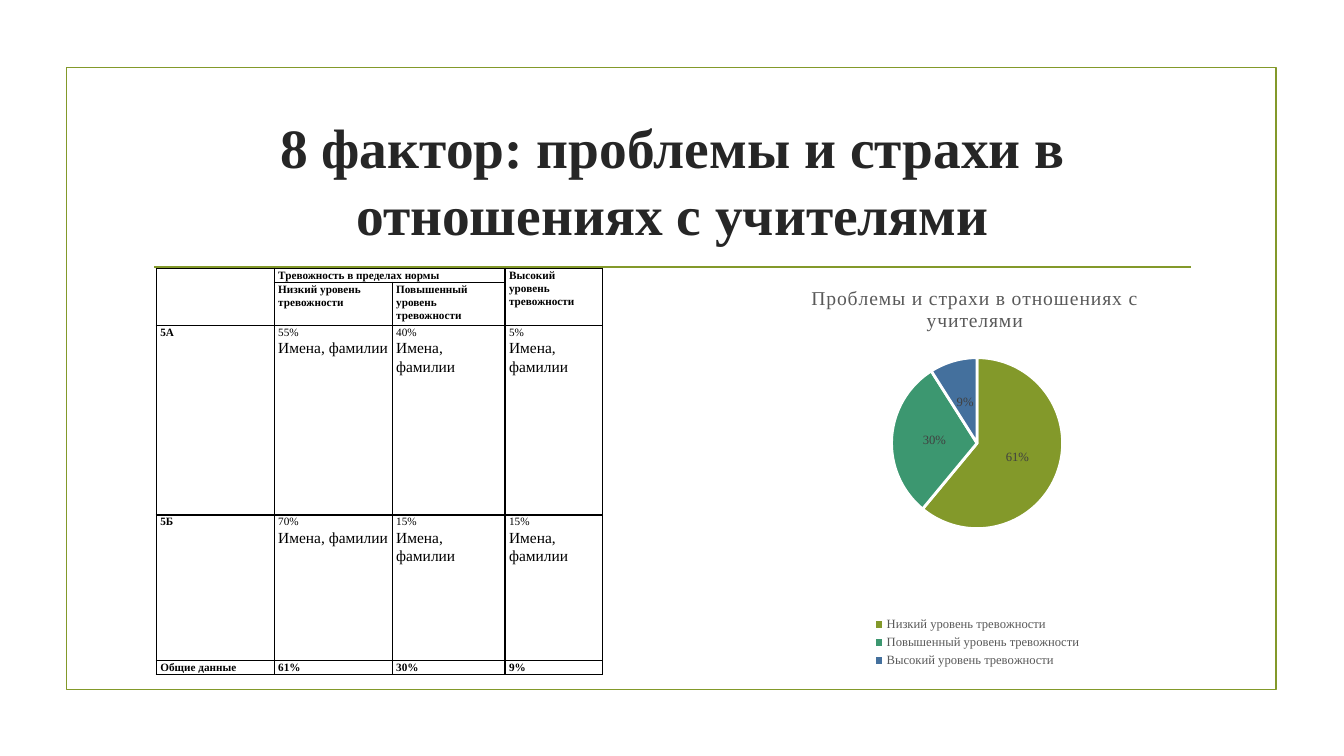
from lxml import etree
from pptx import Presentation
from pptx.chart.data import CategoryChartData
from pptx.dml.color import RGBColor
from pptx.enum import chart as ch, shapes, text
from pptx.oxml import parse_xml
from pptx.oxml.ns import nsdecls, qn
from pptx.util import Inches, Pt

# Content
FONT, GREEN = "Times New Roman", "83992A"
TITLE = "8 фактор: проблемы и страхи в отношениях с учителями"
NAMES = "Имена, фамилии"
ROWS = [
    ["", "Тревожность в пределах нормы", "", "Высокий уровень тревожности"],
    ["", "Низкий уровень тревожности", "Повышенный уровень тревожности", ""],
    ["5А", "55%", "40%", "5%"],
    ["5Б", "70%", "15%", "15%"],
    ["Общие данные", "61%", "30%", "9%"],
]
NAMED_ROWS = (2, 3)
MERGES = [((0, 0), (1, 0)), ((0, 1), (0, 2)), ((0, 3), (1, 3))]
COL_WIDTHS = [1.17, 1.17, 1.12, 0.97]
ROW_HEIGHTS = [0.14, 0.43, 1.88, 1.44, 0.14]
CHART_TITLE = "Проблемы и страхи в отношениях с учителями"
LEVELS = [("Низкий уровень тревожности", 61, GREEN),
          ("Повышенный уровень тревожности", 30, "3C9770"),
          ("Высокий уровень тревожности", 9, "44709D")]


def rgb(color):
    return RGBColor.from_string(color)


def style(font, size, color, bold=False):
    font.name, font.size, font.bold = FONT, Pt(size), bold
    font.color.rgb = rgb(color)


def outline(line, color, width):
    line.color.rgb = rgb(color)
    line.width = Pt(width)


def border(cell):
    tcPr = cell._tc.get_or_add_tcPr()
    for i, side in enumerate(("lnL", "lnR", "lnT", "lnB")):
        tcPr.insert(i, parse_xml(
            f'<a:{side} {nsdecls("a")} w="12700"><a:solidFill>'
            f'<a:srgbClr val="000000"/></a:solidFill></a:{side}>'))


def place(parent, x, y, w, h, inner=False):
    """Give a chart part a fixed place, in fractions of the chart."""
    for old in parent.findall(qn("c:layout")):
        parent.remove(old)
    target = '<c:layoutTarget val="inner"/>' if inner else ""
    modes = '<c:xMode val="edge"/><c:yMode val="edge"/>'
    sizes = "".join(f'<c:{k} val="{v}"/>' for k, v in zip("xywh", (x, y, w, h)))
    return parse_xml(f'<c:layout {nsdecls("c")}><c:manualLayout>{target}{modes}'
                     f'{sizes}</c:manualLayout></c:layout>')


prs = Presentation()
prs.slide_width, prs.slide_height = Inches(13.33), Inches(7.5)
s = prs.slides.add_slide(prs.slide_layouts[5])

# Frame and rule under the title
frame = s.shapes.add_shape(shapes.MSO_SHAPE.RECTANGLE, Inches(0.66), Inches(0.67),
                           Inches(12), Inches(6.17))
frame.shadow.inherit = False
frame.fill.background()
outline(frame.line, GREEN, 1.25)
rule = s.shapes.add_connector(shapes.MSO_CONNECTOR.STRAIGHT, Inches(1.53),
                              Inches(2.65), Inches(11.81), Inches(2.65))
outline(rule.line, GREEN, 1.25)
etree.SubElement(rule._element.spPr, qn("a:effectLst"))

# Title
title = s.shapes.title
title.left, title.top = Inches(1.42), Inches(1.07)
title.width, title.height = Inches(10.5), Inches(1.43)
tf = title.text_frame
tf.text = TITLE
tf.word_wrap = True
tf.auto_size = text.MSO_AUTO_SIZE.NONE
tf.vertical_anchor = text.MSO_ANCHOR.MIDDLE
p = tf.paragraphs[0]
p.alignment = text.PP_ALIGN.CENTER
style(p.runs[0].font, 39.6, "262626", True)

# Table
table = s.shapes.add_table(len(ROWS), len(COL_WIDTHS), Inches(1.55), Inches(2.66),
                           Inches(sum(COL_WIDTHS)), Inches(sum(ROW_HEIGHTS))).table
table.first_row = table.horz_banding = False
for column, width in zip(table.columns, COL_WIDTHS):
    column.width = Inches(width)
for row, height in zip(table.rows, ROW_HEIGHTS):
    row.height = Inches(height)
for i, row in enumerate(ROWS):
    for j, value in enumerate(row):
        cell = table.cell(i, j)
        cell.margin_left = cell.margin_right = Inches(0.04)
        cell.margin_top = cell.margin_bottom = 0
        cell.fill.background()
        border(cell)
        named = i in NAMED_ROWS and j > 0
        cell.text_frame.text = f"{value}\n{NAMES}" if named else value
        for k, p in enumerate(cell.text_frame.paragraphs):
            p.line_spacing = 1.07
            for r in p.runs:
                style(r.font, 11 if k else 8, "000000", not named)
            if not p.runs:
                etree.SubElement(p._p, qn("a:endParaRPr")).set("sz", "800")
for start, end in MERGES:
    table.cell(*start).merge(table.cell(*end))

# Pie chart
data = CategoryChartData()
data.categories = [name for name, _, _ in LEVELS]
data.add_series(CHART_TITLE, [value for _, value, _ in LEVELS])
chart = s.shapes.add_chart(ch.XL_CHART_TYPE.PIE, Inches(7.53), Inches(2.66),
                           Inches(4.28), Inches(4.04), data).chart
style(chart.font, 10, "000000")
chart.has_title = True
tf = chart.chart_title.text_frame
tf.text = CHART_TITLE
r = tf.paragraphs[0].runs[0]
style(r.font, 14, "595959")
r._r.get_or_add_rPr().set("spc", "50")
chart.chart_title.include_in_layout = False

plot = chart.plots[0]
plot.vary_by_categories = True
for i, (_, _, color) in enumerate(LEVELS):
    point = plot.series[0].points[i]
    point.format.fill.solid()
    point.format.fill.fore_color.rgb = rgb(color)
    outline(point.format.line, "FFFFFF", 2)
plot.has_data_labels = True
labels = plot.data_labels
labels.show_percentage, labels.show_value = True, False
labels.number_format, labels.number_format_is_linked = "0%", False
labels.position = ch.XL_LABEL_POSITION.CENTER
style(labels.font, 9, "404040")

chart.has_legend = True
legend = chart.legend
legend.position = ch.XL_LEGEND_POSITION.BOTTOM
legend.include_in_layout = False
style(legend.font, 9, "595959")

# Fixed places for the pie and the legend
area = chart._chartSpace.chart.plotArea
area.insert(0, place(area, 0.1, 0.22, 0.81, 0.42, inner=True))
box = legend._element
layout = place(box, 0.26, 0.85, 0.49, 0.14)
box.find(qn("c:legendPos")).addnext(layout)

prs.save("out.pptx")
